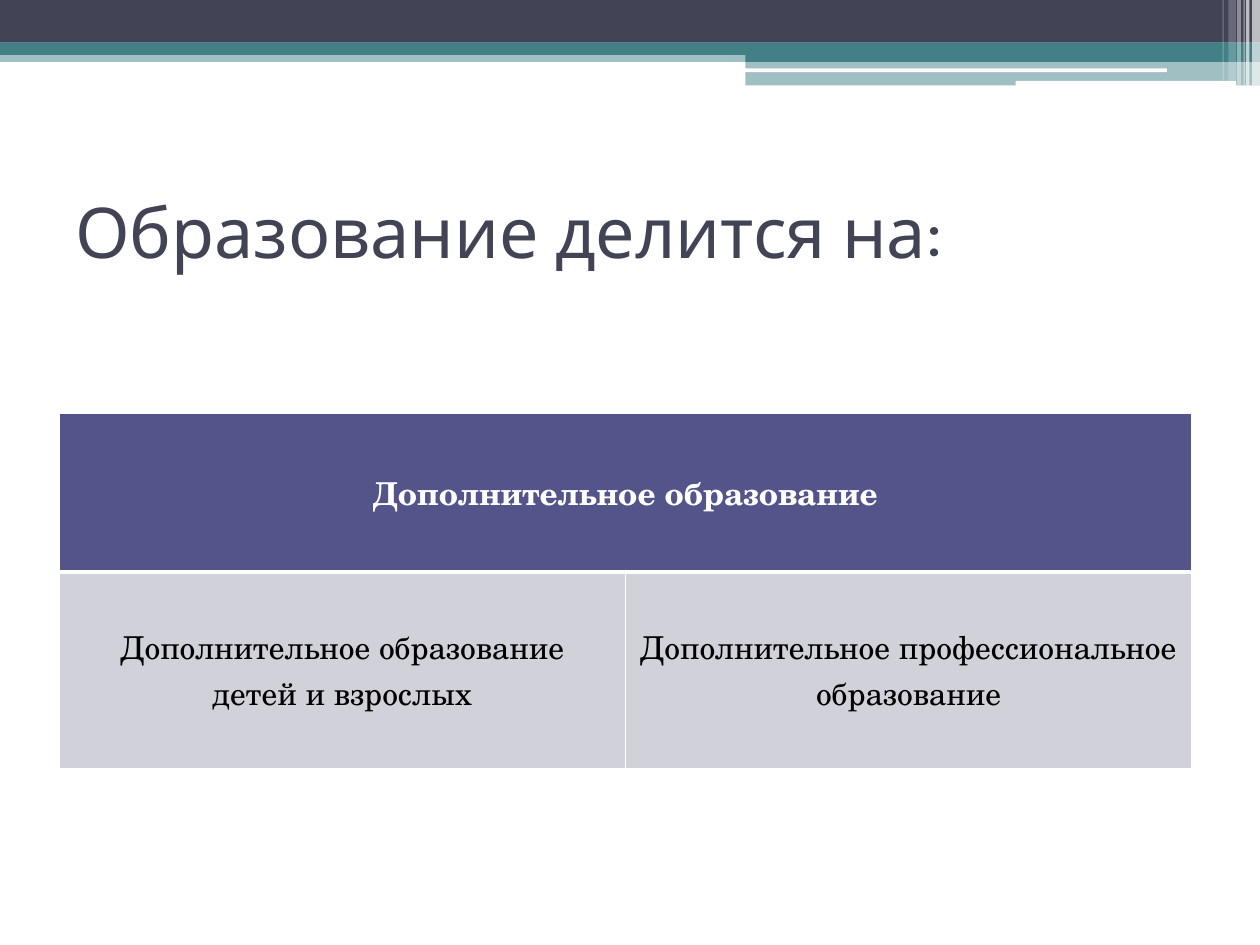
from dataclasses import dataclass

from lxml.etree import SubElement
from pptx import Presentation
from pptx.dml.color import RGBColor as RGB
from pptx.enum.shapes import MSO_SHAPE as Shape
from pptx.enum.text import MSO_ANCHOR as Anchor, PP_ALIGN as Align
from pptx.oxml.ns import qn
from pptx.util import Pt


@dataclass(frozen=True)
class Theme:
    dark: str = "424456"
    teal: str = "438086"
    white: str = "FFFFFF"
    black: str = "000000"
    header: str = "53548A"
    body: str = "D1D1DA"
    title_font: str = "Karla"
    table_font: str = "TeX Gyre Schola"
    title_size: int = 40
    table_size: int = 18


class SlideBuilder:
    def __init__(self, slide, theme):
        self.slide = slide
        self.theme = theme

    def band(self, left, top, width, height, color, opacity=100, rounded=False):
        kind = Shape.ROUNDED_RECTANGLE if rounded else Shape.RECTANGLE
        band = self.slide.shapes.add_shape(
            kind, Pt(left), Pt(top), Pt(width), Pt(height))
        band.shadow.inherit = False
        band.line.fill.background()
        band.fill.solid()
        band.fill.fore_color.rgb = RGB.from_string(color)
        if opacity < 100:
            clr = band.fill._xPr.find(".//" + qn("a:srgbClr"))
            SubElement(clr, qn("a:alpha"), val=str(opacity * 1000))

    def run(self, paragraph, text, font, size, color, bold=False):
        run = paragraph.add_run()
        run.text = text
        run.font.name = font
        run.font.size = Pt(size)
        run.font.bold = bold
        run.font.color.rgb = RGB.from_string(color)

    def title(self, text, left, top, width, height):
        frame = self.slide.shapes.add_textbox(
            Pt(left), Pt(top), Pt(width), Pt(height)).text_frame
        frame.word_wrap = True
        frame.vertical_anchor = Anchor.MIDDLE
        self.run(frame.paragraphs[0], text, self.theme.title_font,
                 self.theme.title_size, self.theme.dark)

    def table(self, left, top, col_widths, row_heights):
        table = self.slide.shapes.add_table(
            len(row_heights), len(col_widths), Pt(left), Pt(top),
            Pt(sum(col_widths)), Pt(sum(row_heights))).table
        for column, width in zip(table.columns, col_widths):
            column.width = Pt(width)
        for row, height in zip(table.rows, row_heights):
            row.height = Pt(height)
        return table

    def borders(self, cell, **widths):
        props = cell._tc.get_or_add_tcPr()
        for index, side in enumerate(("L", "R", "T", "B")):
            line = SubElement(props, qn("a:ln" + side),
                              w=str(Pt(widths.get(side, 1))))
            fill = SubElement(line, qn("a:solidFill"))
            SubElement(fill, qn("a:srgbClr"), val=self.theme.white)
            props.insert(index, line)

    def cell(self, cell, lines, fill, color, bold=False):
        cell.fill.solid()
        cell.fill.fore_color.rgb = RGB.from_string(fill)
        cell.vertical_anchor = Anchor.MIDDLE
        frame = cell.text_frame
        for index, line in enumerate(lines):
            paragraph = frame.add_paragraph() if index else frame.paragraphs[0]
            paragraph.alignment = Align.CENTER
            self.run(paragraph, line, self.theme.table_font,
                     self.theme.table_size, color, bold)


def main():
    theme = Theme()
    deck = Presentation()
    deck.slide_width, deck.slide_height = Pt(720), Pt(540)
    builder = SlideBuilder(deck.slides.add_slide(deck.slide_layouts[6]), theme)

    # Header bands
    builder.band(0, 28.8, 720, 6.6, theme.teal, 50)
    builder.band(0, 0, 720, 24.4, theme.dark)
    builder.band(0, 24.2, 720, 7.2, theme.teal)
    builder.band(426, 28.2, 294, 7.2, theme.teal)
    builder.band(426, 34.6, 294, 14.2, theme.teal, 50)
    builder.band(425.6, 39.1, 241.2, 2.16, theme.white, rounded=True)
    builder.band(580.4, 46.3, 126, 2.88, theme.white, rounded=True)

    # Translucent stripes in the right corner
    stripes = [(715.5, 4.5, 48.8, 65), (712, 2, 48.8, 65),
               (710.6, 0.72, 48.8, 60), (707, 2.16, 48.8, 40),
               (702, 4.3, 46.1, 20), (698.6, 0.72, 46.1, 30)]
    for left, width, height, opacity in stripes:
        builder.band(left, 0, width, height, theme.white, opacity)

    builder.title("Образование делится на:", 36, 90, 648, 84)

    # Table of education kinds
    kinds = builder.table(34, 236.4, [323.5, 323.5], [90.4, 112.4])
    header = kinds.cell(0, 0)
    header.merge(kinds.cell(0, 1))
    builder.cell(header, ["Дополнительное образование"],
                 theme.header, theme.white, bold=True)
    branches = [["Дополнительное образование", "детей и взрослых"],
                ["Дополнительное профессиональное образование"]]
    for column, lines in enumerate(branches):
        builder.borders(kinds.cell(0, column), B=3)
        branch = kinds.cell(1, column)
        builder.cell(branch, lines, theme.body, theme.black)
        builder.borders(branch, T=3)

    deck.save("out.pptx")


if __name__ == "__main__":
    main()
